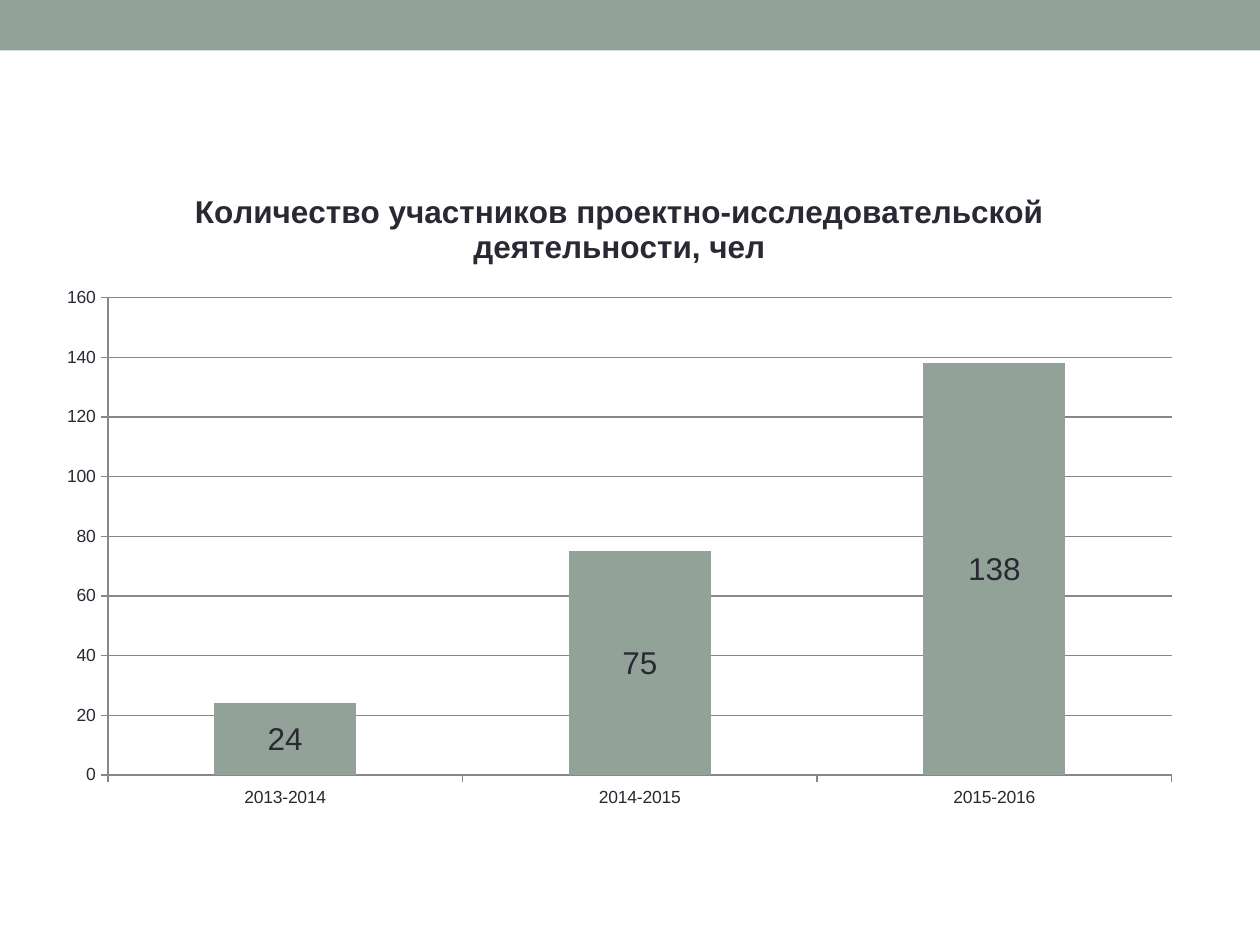
from pptx import Presentation
from pptx import util as u
from pptx.chart import data as chart_data
from pptx.dml import color
from pptx.enum import chart as ch, shapes

SAGE, INK, GRID = "93A299", "292934", "878787"


def rgb(value):
    return color.RGBColor.from_string(value)


class SlideBuilder:
    """Holds the style and the current slide; lengths are in points."""

    font_name = "Arial"

    def __init__(self, slide):
        self.slide = slide

    def style_font(self, font, size, bold=False):
        font.name = self.font_name
        font.size = u.Pt(size)
        font.bold = bold
        font.color.rgb = rgb(INK)

    def bar(self, left, top, width, height, fill):
        band = self.slide.shapes.add_shape(
            shapes.MSO_SHAPE.RECTANGLE, *map(u.Pt, (left, top, width, height)))
        band.shadow.inherit = False
        band.fill.solid()
        band.fill.fore_color.rgb = rgb(fill)
        band.line.fill.background()

    def column_chart(self, left, top, width, height, title, values):
        table = chart_data.CategoryChartData()
        table.categories = list(values)
        table.add_series("Участники", list(values.values()))
        chart = self.slide.shapes.add_chart(
            ch.XL_CHART_TYPE.COLUMN_CLUSTERED,
            *map(u.Pt, (left, top, width, height)), table).chart
        self.style_font(chart.font, 10)
        chart.has_legend = False

        chart.has_title = True
        chart.chart_title.include_in_layout = False
        heading = chart.chart_title.text_frame.paragraphs[0].add_run()
        heading.text = title
        self.style_font(heading.font, 18, bold=True)

        for axis in (chart.category_axis, chart.value_axis):
            axis.major_tick_mark = ch.XL_TICK_MARK.OUTSIDE
            axis.minor_tick_mark = ch.XL_TICK_MARK.NONE
            self.thin_line(axis.format.line)
        scale = chart.value_axis
        scale.minimum_scale, scale.maximum_scale, scale.major_unit = 0, 160, 20
        scale.has_major_gridlines = True
        self.thin_line(scale.major_gridlines.format.line)

        plot = chart.plots[0]
        plot.gap_width = 150
        plot.vary_by_categories = False
        columns = plot.series[0].format.fill
        columns.solid()
        columns.fore_color.rgb = rgb(SAGE)
        plot.has_data_labels = True
        labels = plot.data_labels
        labels.show_value = True
        labels.position = ch.XL_LABEL_POSITION.CENTER
        self.style_font(labels.font, 18)

    def thin_line(self, line):
        line.width = u.Pt(0.75)
        line.color.rgb = rgb(GRID)


def main():
    deck = Presentation()
    deck.slide_width, deck.slide_height = u.Pt(720), u.Pt(540)
    blank_layout = deck.slide_layouts[6]
    builder = SlideBuilder(deck.slides.add_slide(blank_layout))
    builder.bar(0, 0, 720, 28.8, SAGE)
    builder.column_chart(
        25.2, 94.3, 657.4, 374.4,
        "Количество участников проектно-исследовательской деятельности, чел",
        {"2013-2014": 24, "2014-2015": 75, "2015-2016": 138})
    deck.save("out.pptx")


if __name__ == "__main__":
    main()
